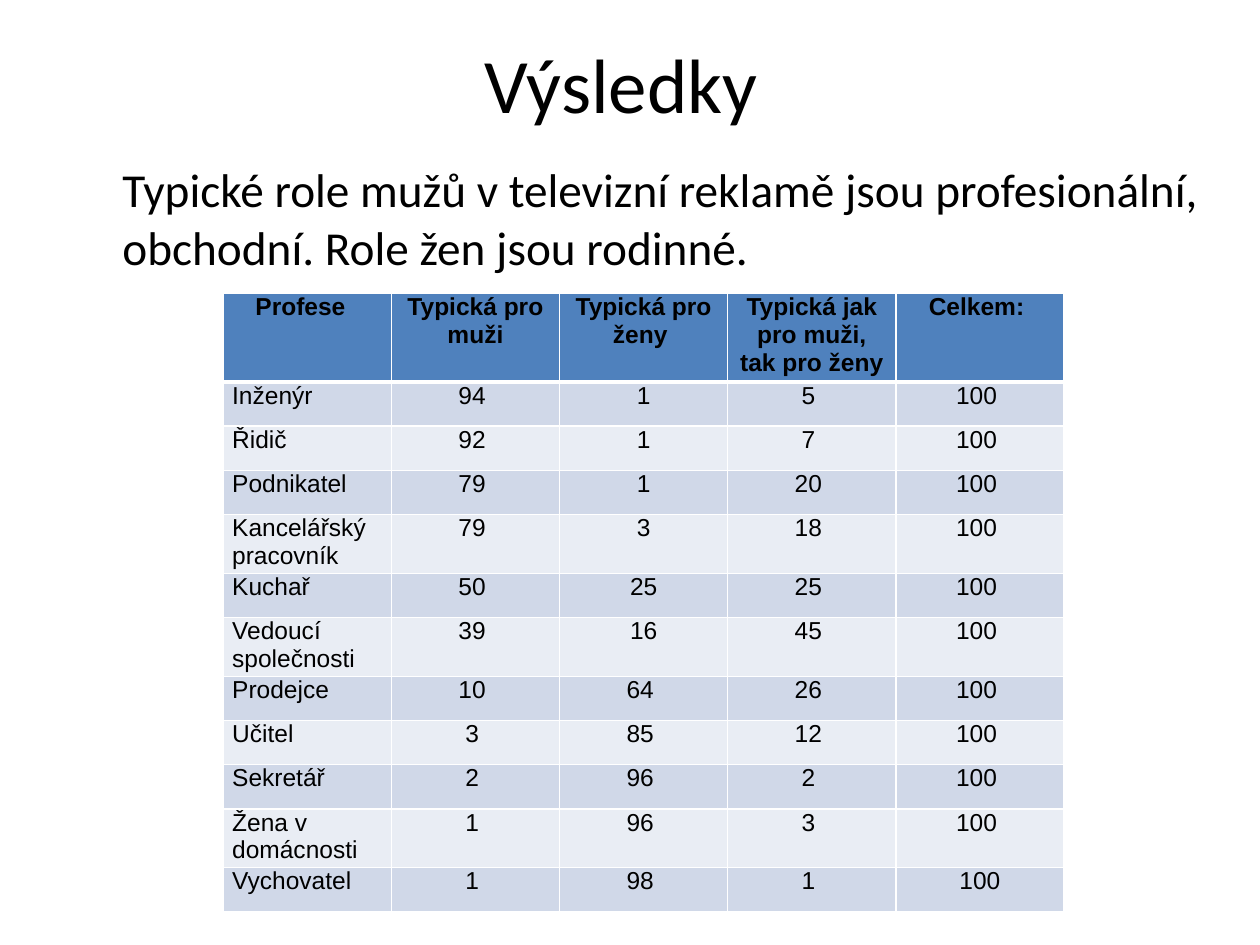
from dataclasses import dataclass

from lxml.etree import SubElement
from pptx import Presentation
from pptx.dml.color import RGBColor
from pptx.enum.text import MSO_ANCHOR, PP_ALIGN
from pptx.oxml.ns import qn
from pptx.slide import Slide
from pptx.table import _Cell
from pptx.text.text import TextFrame, _Run
from pptx.util import Cm, Length, Pt

BLACK = RGBColor(0x00, 0x00, 0x00)
WHITE = RGBColor(0xFF, 0xFF, 0xFF)
HEADER_BLUE = RGBColor(0x4F, 0x81, 0xBD)
BAND_DARK = RGBColor(0xD0, 0xD8, 0xE8)
BAND_LIGHT = RGBColor(0xE9, 0xED, 0xF4)

COLUMN_WIDTH = Cm(3.39)
HEADER_HEIGHT = Cm(1.75)
THIN_BORDER = Pt(1)
HEADER_BORDER = Pt(3)
HANGING_INDENT = Cm(0.95)


@dataclass(frozen=True)
class Profession:
    name: str
    men: str
    women: str
    both: str
    total: str = "100 "
    height: Length = Cm(0.89)

    @property
    def texts(self) -> tuple[str, ...]:
        return self.name, self.men, self.women, self.both, self.total


HEADINGS = (
    "Profese  ",
    "Typická pro muži",
    "Typická pro ženy ",
    "Typická jak pro muži, tak pro ženy",
    "Celkem: ",
)
TWO_LINES = Cm(1.14)
PROFESSIONS = (
    Profession("Inženýr", "94 ", "1", "5 "),
    Profession("Řidič", "92 ", "1", "7 "),
    Profession("Podnikatel", "79 ", "1", "20 "),
    Profession("Kancelářský pracovník", "79 ", "3", "18 ", height=TWO_LINES),
    Profession("Kuchař", "50 ", "25", "25 "),
    Profession("Vedoucí společnosti", "39 ", "16", "45 ", height=TWO_LINES),
    Profession("Prodejce", "10 ", "64 ", "26 "),
    Profession("Učitel", "3 ", "85 ", "12 "),
    Profession("Sekretář", "2 ", "96 ", "2 "),
    Profession("Žena v domácnosti", "1 ", "96 ", "3 ", height=TWO_LINES),
    Profession("Vychovatel", "1 ", "98 ", "1 ", total="100"),
)


def format_run(run: _Run, font_name: str, size: float, bold: bool = False) -> None:
    run.font.name = font_name
    run.font.size = Pt(size)
    run.font.bold = bold
    run.font.color.rgb = BLACK


def add_text_frame(slide: Slide, left: Length, top: Length, width: Length, height: Length) -> TextFrame:
    text_frame = slide.shapes.add_textbox(left, top, width, height).text_frame
    text_frame.word_wrap = True
    return text_frame


def add_title(slide: Slide) -> None:
    text_frame = add_text_frame(slide, Cm(1.27), Cm(0), Cm(22.86), Cm(3.33))
    text_frame.vertical_anchor = MSO_ANCHOR.MIDDLE
    text_frame.text = "Výsledky "
    paragraph = text_frame.paragraphs[0]
    paragraph.alignment = PP_ALIGN.CENTER
    format_run(paragraph.runs[0], "Calibri", 44)


def add_summary(slide: Slide) -> None:
    text_frame = add_text_frame(slide, Cm(1.27), Cm(2.92), Cm(23.62), Cm(14.1))
    paragraph = text_frame.paragraphs[0]
    paragraph.text = "\t"
    paragraph.add_run().text = (
        "Typické role mužů v televizní reklamě jsou profesionální, "
        "obchodní. Role žen jsou rodinné."
    )
    properties = paragraph._p.get_or_add_pPr()
    properties.set("marL", str(HANGING_INDENT))
    properties.set("indent", str(-HANGING_INDENT))
    for run, size in zip(paragraph.runs, (32, 27)):
        format_run(run, "Calibri", size)


def set_borders(cell: _Cell, top: Length, bottom: Length) -> None:
    widths = {"a:lnL": THIN_BORDER, "a:lnR": THIN_BORDER, "a:lnT": top, "a:lnB": bottom}
    properties = cell._tc.get_or_add_tcPr()
    for tag, width in widths.items():
        line = SubElement(properties, qn(tag), w=str(width))
        fill = SubElement(line, qn("a:solidFill"))
        SubElement(fill, qn("a:srgbClr"), val=str(WHITE))


def fill_cell(cell: _Cell, text: str, row: int, column: int) -> None:
    is_header = row == 0
    set_borders(
        cell,
        top=HEADER_BORDER if row == 1 else THIN_BORDER,
        bottom=HEADER_BORDER if is_header else THIN_BORDER,
    )
    cell.fill.solid()
    cell.fill.fore_color.rgb = HEADER_BLUE if is_header else (BAND_LIGHT, BAND_DARK)[row % 2]
    cell.margin_left = cell.margin_right = Cm(0.18)
    cell.margin_top = cell.margin_bottom = Cm(0)
    cell.text_frame.text = text
    paragraph = cell.text_frame.paragraphs[0]
    paragraph.alignment = PP_ALIGN.CENTER if is_header or column else PP_ALIGN.LEFT
    format_run(paragraph.runs[0], "Arial", 14, bold=is_header)


def add_profession_table(slide: Slide) -> None:
    rows = (HEADINGS, *(profession.texts for profession in PROFESSIONS))
    heights = (HEADER_HEIGHT, *(profession.height for profession in PROFESSIONS))
    table = slide.shapes.add_table(
        len(rows), len(HEADINGS), Cm(4.5), Cm(5.92), COLUMN_WIDTH * len(HEADINGS), sum(heights)
    ).table
    table.horz_banding = False
    for column in table.columns:
        column.width = COLUMN_WIDTH
    for row_index, (texts, height) in enumerate(zip(rows, heights)):
        table.rows[row_index].height = height
        for column_index, text in enumerate(texts):
            fill_cell(table.cell(row_index, column_index), text, row_index, column_index)


def main() -> None:
    """Build the results slide with its table of professions."""
    presentation = Presentation()
    presentation.slide_width = Cm(25.4)
    presentation.slide_height = Cm(19.05)
    slide = presentation.slides.add_slide(presentation.slide_layouts[6])
    add_title(slide)
    add_summary(slide)
    add_profession_table(slide)
    presentation.save("out.pptx")


if __name__ == "__main__":
    main()
